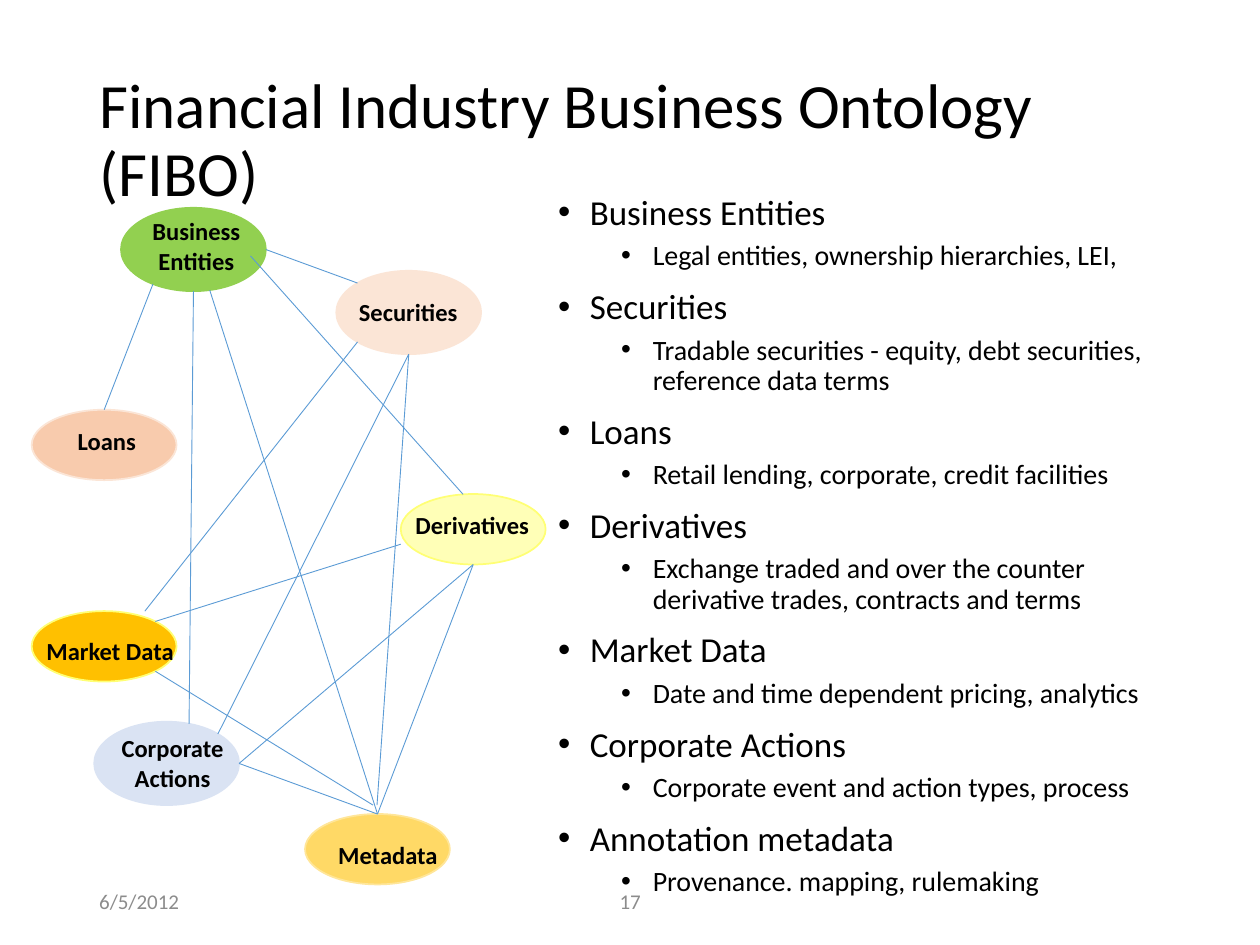
from dataclasses import dataclass
from math import cos, radians, sin

from lxml import etree
from pptx import Presentation
from pptx.dml.color import RGBColor
from pptx.enum.shapes import MSO_CONNECTOR, MSO_SHAPE
from pptx.enum.text import MSO_ANCHOR, MSO_AUTO_SIZE, PP_ALIGN
from pptx.oxml.ns import qn
from pptx.util import Cm, Pt

STRAIGHT = MSO_CONNECTOR.STRAIGHT
OVAL = MSO_SHAPE.OVAL
TOP_ANCHOR, MIDDLE = MSO_ANCHOR.TOP, MSO_ANCHOR.MIDDLE
LEFT_ALIGN, CENTER = PP_ALIGN.LEFT, PP_ALIGN.CENTER
NO_AUTOFIT = MSO_AUTO_SIZE.NONE
TITLE_ONLY = 5
TOP_SITE = 0


@dataclass(frozen=True)
class Theme:
    font: str = "Calibri"
    ink: str = "000000"
    muted: str = "8C8C8C"
    link: str = "5B9BD5"
    title: int = 36
    heading: int = 20
    detail: int = 16
    label: int = 14
    footer: int = 12


THEME = Theme()

# Topic: ellipse (left, top, height), fill, outline, label box
OVAL_WIDTH = 2.92
TALL, FLAT = 1.68, 1.42
TOPICS = {
    "Business Entities": ((2.44, 4.19, TALL), "92D050", "92D050", (2.26, 4.24, 3.4, 1.63)),
    "Securities": ((6.78, 5.46, TALL), "FBE5D6", "FBE5D6", (6.87, 5.87, 2.72, 0.86)),
    "Loans": ((0.64, 8.26, FLAT), "F8CBAD", "FBE5D6", (0.82, 8.46, 2.67, 0.97)),
    "Derivatives": ((8.08, 9.96, FLAT), "FFFFB7", "FFFF75", (7.82, 10.16, 3.4, 0.97)),
    "Market Data": ((0.64, 12.32, FLAT), "FFC000", "FFFF75", (0.52, 12.7, 3.4, 0.86)),
    "Corporate Actions": ((1.9, 14.55, TALL), "DAE3F3", "DAE3F3", (1.88, 14.66, 3.2, 1.45)),
    "Metadata": ((6.15, 16.41, FLAT), "FFD966", "FFE699", (6.41, 16.81, 2.82, 0.97)),
}

# Places on an ellipse, in degrees clockwise from its right end
RIGHT, LOWER_RIGHT, BOTTOM, LOWER_LEFT = 0, 45, 90, 135
UPPER_LEFT, TOP, UPPER_RIGHT = 225, 270, 315

# Each end is (topic, angle), or (x, y) where the line stops off the outline
LINKS = [
    (("Securities", BOTTOM), ("Corporate Actions", UPPER_RIGHT)),
    (("Business Entities", 124), ("Loans", TOP)),
    (("Securities", UPPER_LEFT), ("Business Entities", RIGHT)),
    (("Corporate Actions", 288), ("Business Entities", BOTTOM)),
    (("Derivatives", 262), (5.05, 5.16)),
    ((8.08, 10.97), ("Market Data", UPPER_RIGHT)),
    (("Derivatives", BOTTOM), ("Corporate Actions", RIGHT)),
    (("Business Entities", 77), ("Metadata", TOP)),
    ((7.6, 16.23), ("Securities", BOTTOM)),
    (("Derivatives", BOTTOM), ("Metadata", TOP)),
    (("Securities", LOWER_LEFT), (2.92, 12.32)),
    ((7.52, 16.23), ("Market Data", LOWER_RIGHT)),
    (("Corporate Actions", RIGHT), ("Metadata", TOP)),
]

OUTLINE = [
    ("Business Entities", "Legal entities, ownership hierarchies, LEI,"),
    ("Securities", "Tradable securities - equity, debt securities, reference data terms"),
    ("Loans", "Retail lending, corporate, credit facilities"),
    ("Derivatives", "Exchange traded and over the counter derivative trades, contracts and terms"),
    ("Market Data", "Date and time dependent pricing, analytics"),
    ("Corporate Actions", "Corporate event and action types, process"),
    ("Annotation metadata", "Provenance. mapping, rulemaking"),
]


def write(paragraph, text, *, size, color=THEME.ink, bold=False, align=LEFT_ALIGN,
          spacing=None, before=None):
    """Put formatted text into a paragraph."""
    paragraph.alignment = align
    if spacing:
        paragraph.line_spacing = spacing
    if before is not None:
        paragraph.space_before = Pt(before)
    run = paragraph.add_run()
    run.text = text
    run.font.name = THEME.font
    run.font.size = Pt(size)
    run.font.bold = bold
    run.font.color.rgb = RGBColor.from_string(color)


def set_bullet(paragraph, indent):
    properties = paragraph._p.get_or_add_pPr()
    properties.set("marL", str(Cm(indent)))
    properties.set("indent", str(-Cm(0.64)))
    etree.SubElement(properties, qn("a:buFont")).set("typeface", "Arial")
    etree.SubElement(properties, qn("a:buChar")).set("char", "•")


def add_text_frame(slide, box, anchor=TOP_ANCHOR):
    frame = slide.shapes.add_textbox(*map(Cm, box)).text_frame
    frame.word_wrap = True
    frame.vertical_anchor = anchor
    return frame


def add_title(slide, text):
    title = slide.shapes.title
    title.left, title.top, title.width, title.height = map(Cm, (1.75, 1.02, 21.9, 3.68))
    frame = title.text_frame
    frame.auto_size = NO_AUTOFIT
    frame.vertical_anchor = MIDDLE
    write(frame.paragraphs[0], text, size=THEME.title, spacing=0.9)


def add_topic(slide, topic):
    (left, top, height), fill, outline, _ = TOPICS[topic]
    oval = slide.shapes.add_shape(OVAL, Cm(left), Cm(top), Cm(OVAL_WIDTH), Cm(height))
    oval.shadow.inherit = False
    oval.fill.solid()
    oval.fill.fore_color.rgb = RGBColor.from_string(fill)
    oval.line.color.rgb = RGBColor.from_string(outline)
    oval.line.width = Pt(1)
    return oval


def locate(end):
    """Return the x and y of a link's end."""
    if end[0] not in TOPICS:
        return end
    topic, angle = end
    left, top, height = TOPICS[topic][0]
    turn = radians(angle)
    return (left + OVAL_WIDTH / 2 * (1 + cos(turn)), top + height / 2 * (1 + sin(turn)))


def add_link(slide, start, end, ovals):
    points = (*locate(start), *locate(end))
    link = slide.shapes.add_connector(STRAIGHT, *map(Cm, points))
    link.line.color.rgb = RGBColor.from_string(THEME.link)
    link.line.width = Pt(0.5)
    etree.SubElement(link._element.spPr, qn("a:effectLst"))
    if end[1] == TOP:
        link.end_connect(ovals[end[0]], TOP_SITE)


def add_outline(slide):
    frame = add_text_frame(slide, (11, 3.81, 13.13, 15.44))
    paragraph = frame.paragraphs[0]
    for heading, detail in OUTLINE:
        if heading != OUTLINE[0][0]:
            paragraph = frame.add_paragraph()
        write(paragraph, heading, size=THEME.heading, spacing=0.9, before=10)
        set_bullet(paragraph, 0.64)
        paragraph = frame.add_paragraph()
        paragraph.level = 1
        write(paragraph, detail, size=THEME.detail, spacing=0.9, before=5)
        set_bullet(paragraph, 1.91)


def add_footer(slide, text, left, width, align):
    frame = add_text_frame(slide, (left, 17.65, width, 1.02), MIDDLE)
    write(frame.paragraphs[0], text, size=THEME.footer, color=THEME.muted, align=align)


def main():
    deck = Presentation()
    deck.slide_width, deck.slide_height = Cm(25.4), Cm(19.05)
    slide = deck.slides.add_slide(deck.slide_layouts[TITLE_ONLY])

    # Title, outline and footer
    add_title(slide, "Financial Industry Business Ontology (FIBO)")
    add_outline(slide)
    add_footer(slide, "6/5/2012", 1.75, 5.72, LEFT_ALIGN)
    add_footer(slide, "17", 8.41, 8.59, CENTER)

    # Network of topics, with labels above the links
    ovals = {topic: add_topic(slide, topic) for topic in TOPICS}
    for start, end in LINKS:
        add_link(slide, start, end, ovals)
    for topic, (*_, label_box) in TOPICS.items():
        label = add_text_frame(slide, label_box)
        write(label.paragraphs[0], topic, size=THEME.label, bold=True, align=CENTER)

    deck.save("out.pptx")


if __name__ == "__main__":
    main()
